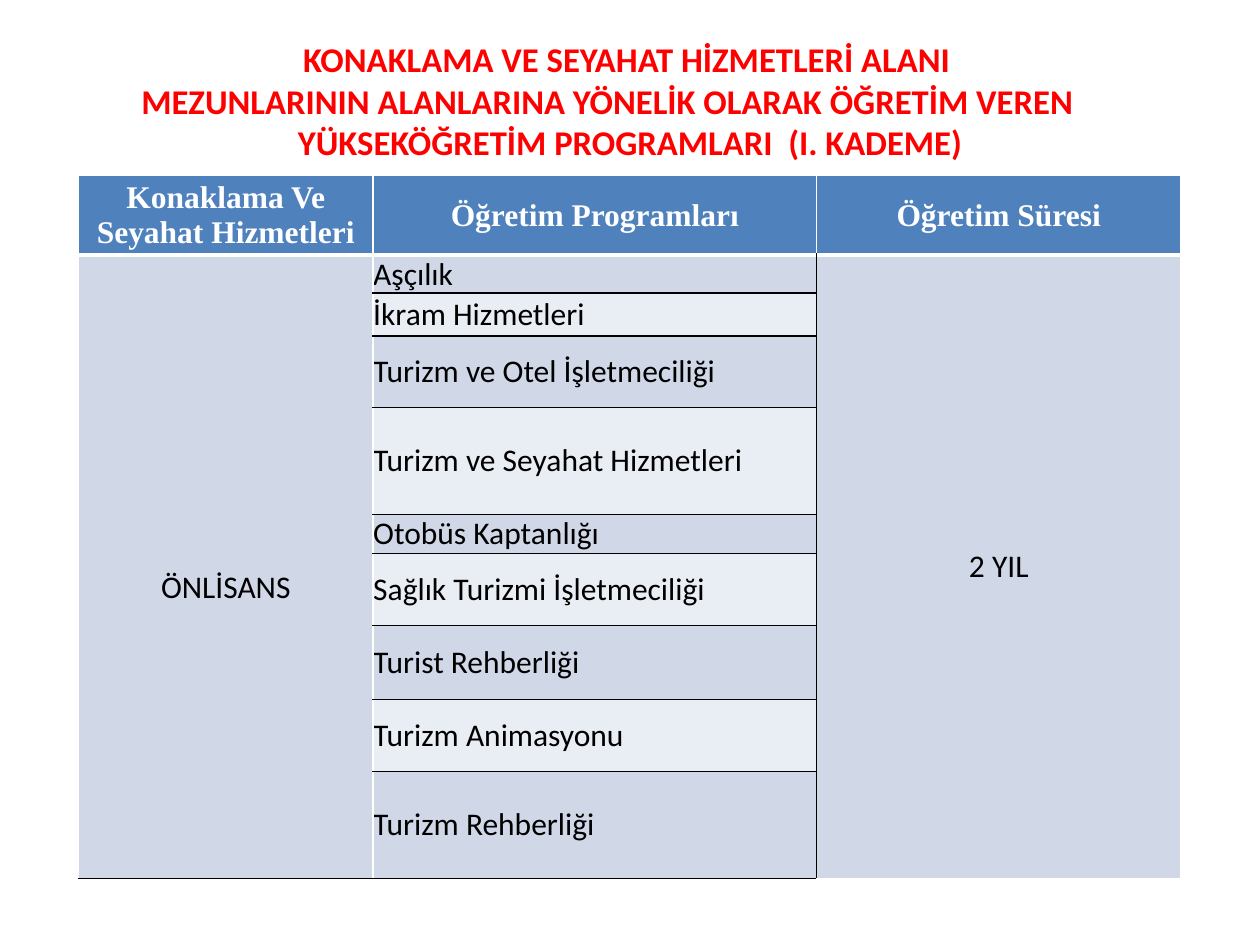
from dataclasses import dataclass
from lxml.etree import SubElement as Sub
from pptx import Presentation
from pptx.dml.color import RGBColor as Rgb
from pptx.enum.text import MSO_ANCHOR as Anchor, PP_ALIGN as Align
from pptx.oxml.ns import qn
from pptx.util import Pt


@dataclass(frozen=True)
class Theme:
    red: str = "FF0000"
    blue: str = "4F81BD"
    dark: str = "D0D8E8"
    light: str = "E9EDF4"
    white: str = "FFFFFF"
    black: str = "000000"
    sans: str = "Calibri"
    serif: str = "Times New Roman"
    title: float = 19.8
    body: float = 18


TITLE = [  # text, left indent
    ("KONAKLAMA VE SEYAHAT HİZMETLERİ ALANI", 22),
    ("MEZUNLARININ ALANLARINA YÖNELİK OLARAK ÖĞRETİM VEREN", 0),
    ("YÜKSEKÖĞRETİM PROGRAMLARI  (I. KADEME)", 26),
]
HEADS = ["Konaklama Ve Seyahat Hizmetleri", "Öğretim Programları",
         "Öğretim Süresi"]
COURSES = ["Aşçılık", "İkram Hizmetleri", "Turizm ve Otel İşletmeciliği",
           "Turizm ve Seyahat Hizmetleri", "Otobüs Kaptanlığı",
           "Sağlık Turizmi İşletmeciliği", "Turist Rehberliği",
           "Turizm Animasyonu", "Turizm Rehberliği"]
WIDTHS = [168.5, 253.4, 208.1]
HEIGHTS = [45.4, 20.2, 24.5, 41, 61.2, 22.3, 41, 42.5, 41, 61.2]


def write(para, text, font, size, color, bold=False, align=Align.CENTER,
          indent=0):
    para.alignment = align
    if indent:
        para._p.get_or_add_pPr().set("marL", str(Pt(indent)))
    run = para.add_run()
    run.text = text
    run.font.name, run.font.size, run.font.bold = font, Pt(size), bold
    run.font.color.rgb = Rgb.from_string(color)


def edge(cell, **sides):
    """Draw cell borders, each given as L, R, T or B=(color, width)."""
    props = cell._tc.get_or_add_tcPr()
    for side in "LRTB":
        if side in sides:
            color, width = sides[side]
            line = Sub(props, qn(f"a:ln{side}"), w=str(Pt(width)))
            fill = Sub(line, qn("a:solidFill"))
            Sub(fill, qn("a:srgbClr"), val=color)


class Page:
    def __init__(self, slide, theme):
        self.slide, self.theme = slide, theme

    def title(self, lines, left, top, width, height):
        t = self.theme
        box = self.slide.shapes.add_textbox(Pt(left), Pt(top), Pt(width),
                                            Pt(height))
        frame = box.text_frame
        frame.word_wrap = True
        frame.margin_left = frame.margin_right = 0
        frame.margin_top = frame.margin_bottom = 0
        for i, (text, indent) in enumerate(lines):
            para = frame.add_paragraph() if i else frame.paragraphs[0]
            write(para, text, t.sans, t.title, t.red, True, indent=indent)

    def grid(self, left, top, widths, heights):
        frame = self.slide.shapes.add_table(
            len(heights), len(widths), Pt(left), Pt(top), Pt(sum(widths)),
            Pt(sum(heights)))
        table = frame.table
        for col, width in zip(table.columns, widths):
            col.width = Pt(width)
        for row, height in zip(table.rows, heights):
            row.height = Pt(height)
        return table

    def cell(self, cell, fill, text="", font=None, color=None, bold=False,
             align=Align.CENTER, drop=None, **sides):
        """Fill one cell; drop is a top margin that replaces centring."""
        t = self.theme
        cell.margin_left = cell.margin_right = 0
        cell.margin_top, cell.margin_bottom = Pt(drop or 0), 0
        cell.vertical_anchor = Anchor.TOP if drop else Anchor.MIDDLE
        edge(cell, **sides)
        cell.fill.solid()
        cell.fill.fore_color.rgb = Rgb.from_string(fill)
        if text:
            write(cell.text_frame.paragraphs[0], text, font or t.sans, t.body,
                  color or t.black, bold, align)

    def span(self, table, col, text, left, right, foot, drop=None):
        """Merge a column below its heading into one labelled cell."""
        t = self.theme
        last = len(table.rows) - 1
        table.cell(1, col).merge(table.cell(last, col))
        for row in range(1, last + 1):
            sides = {"L": left, "R": right}
            if row == 1:
                sides["T"] = (t.white, 3)
            if row in (1, last):
                sides["B"] = foot
            self.cell(table.cell(row, col), t.dark, text if row == 1 else "",
                      drop=drop if row == 1 else None, **sides)


def main():
    deck = Presentation()
    deck.slide_width, deck.slide_height = Pt(720), Pt(540)
    t = Theme()
    page = Page(deck.slides.add_slide(deck.slide_layouts[6]), t)
    page.title(TITLE, 36, 21.6, 622, 73)

    table = page.grid(44.8, 100.4, WIDTHS, HEIGHTS)
    white, black, thick = (t.white, 1), (t.black, 1), (t.white, 3)
    for col, text in enumerate(HEADS):
        page.cell(table.cell(0, col), t.blue, text, t.serif, t.white, True,
                  L=white, R=white, T=white, B=thick)
    page.span(table, 0, "ÖNLİSANS", white, white, black, drop=179)
    for row, text in enumerate(COURSES, 1):
        page.cell(table.cell(row, 1), t.dark if row % 2 else t.light, text,
                  align=Align.LEFT, L=white, R=black,
                  T=thick if row == 1 else black, B=black)
    page.span(table, 2, "2 YIL", black, white, white)
    deck.save("out.pptx")


if __name__ == "__main__":
    main()
